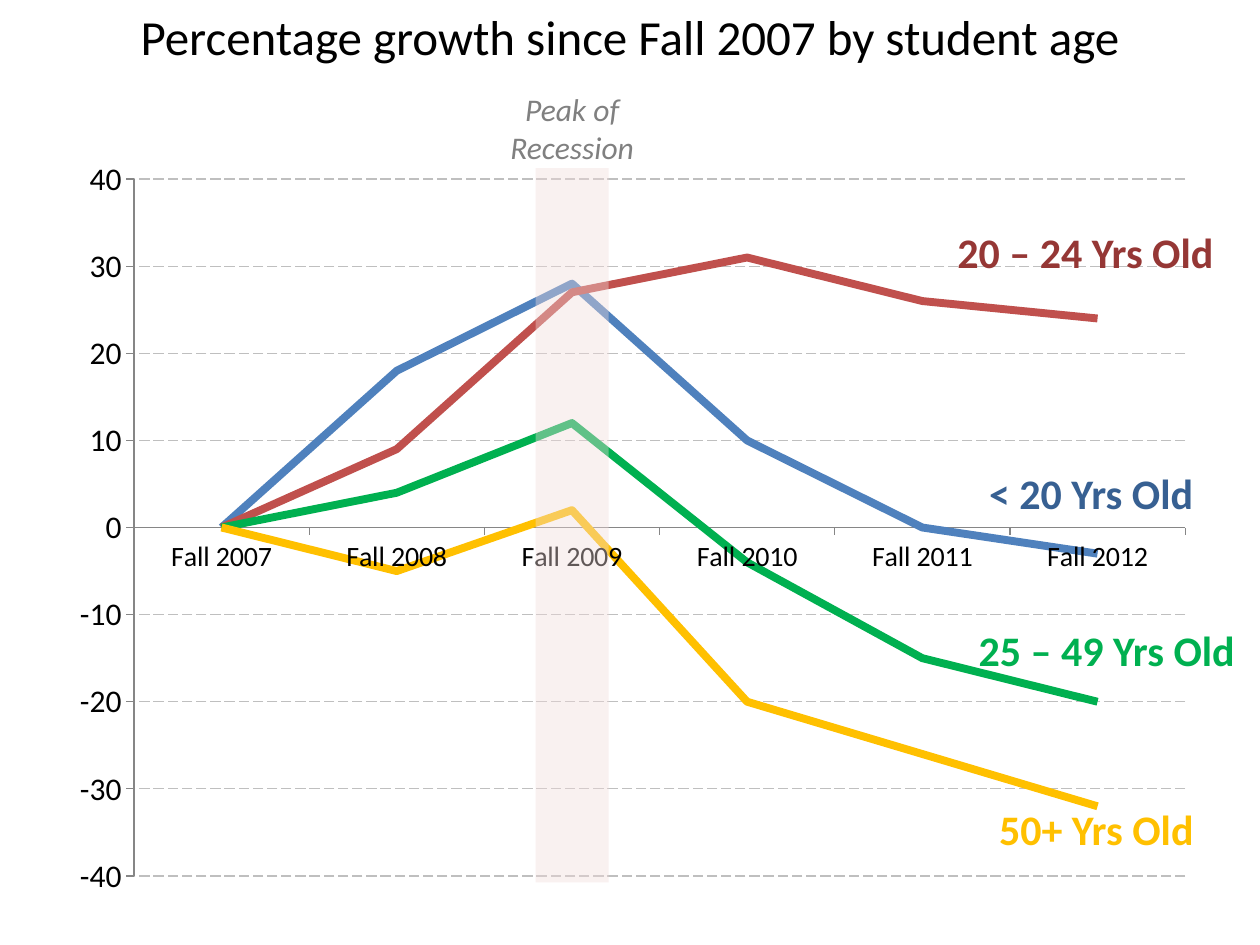
import lxml.etree
import pptx
import pptx.chart.data
import pptx.dml.color
import pptx.enum.chart
import pptx.enum.dml
import pptx.enum.shapes
import pptx.enum.text
import pptx.oxml.ns
import pptx.util

Cm = pptx.util.Cm
Pt = pptx.util.Pt
RGB = pptx.dml.color.RGBColor
qn = pptx.oxml.ns.qn
Align = pptx.enum.text.PP_ALIGN

BLACK = RGB(0x00, 0x00, 0x00)
GRAY = RGB(0x80, 0x80, 0x80)
AXIS = RGB(0x86, 0x86, 0x86)
GRID = RGB(0xBF, 0xBF, 0xBF)
BLUE = RGB(0x4F, 0x81, 0xBD)
NAVY = RGB(0x37, 0x60, 0x92)
RED = RGB(0xC0, 0x50, 0x4D)
WINE = RGB(0x95, 0x37, 0x35)
GREEN = RGB(0x00, 0xB0, 0x50)
GOLD = RGB(0xFF, 0xC0, 0x00)
PINK = RGB(0xF2, 0xDC, 0xDB)

TERMS = [f"Fall {year}" for year in range(2007, 2013)]
GROWTH = [
    ("Series 1", (0, 18, 28, 10, 0, -3), BLUE),
    ("Series 2", (0, 9, 27, 31, 26, 24), RED),
    ("Series 3", (0, 4, 12, -4, -15, -20), GREEN),
    ("Series 4", (0, -5, 2, -20, -26, -32), GOLD),
]
LABELS = [
    ("20 – 24 Yrs Old", (19.05, 4.45, 6.15, 1.27), WINE),
    ("< 20 Yrs Old", (19.69, 9.3, 5.51, 1.27), NAVY),
    ("25 – 49 Yrs Old", (19.48, 12.47, 5.92, 1.27), GREEN),
    ("50+ Yrs Old", (19.89, 16.08, 4.45, 1.27), GOLD),
]
PLOT = {"x": 0.07, "y": 0.05, "w": 0.91, "h": 0.91}


class Board:
    font = "Calibri"

    def __init__(self, deck):
        self.slide = deck.slides.add_slide(deck.slide_layouts[6])

    def text(self, words, area, size, color, align=None, bold=None, slant=None):
        box = self.slide.shapes.add_textbox(*map(Cm, area))
        frame = box.text_frame
        frame.word_wrap = True
        frame.text = words
        para = frame.paragraphs[0]
        para.alignment = align
        font = para.runs[0].font
        font.name, font.size = self.font, Pt(size)
        font.bold, font.italic = bold, slant
        font.color.rgb = color

    def band(self, area, color, alpha):
        kind = pptx.enum.shapes.MSO_SHAPE.RECTANGLE
        box = self.slide.shapes.add_shape(kind, *map(Cm, area))
        box.shadow.inherit = False
        box.fill.solid()
        box.fill.fore_color.rgb = color
        box.line.fill.background()
        tint = box._element.spPr.find(".//" + qn("a:srgbClr"))
        lxml.etree.SubElement(tint, qn("a:alpha")).set("val", str(alpha * 1000))

    def lines(self, area, cats, rows):
        data = pptx.chart.data.CategoryChartData()
        data.categories = cats
        for name, vals, _ in rows:
            data.add_series(name, vals)
        kind = pptx.enum.chart.XL_CHART_TYPE.LINE
        chart = self.slide.shapes.add_chart(kind, *map(Cm, area), data).chart
        chart.has_legend = chart.has_title = False
        chart.font.name, chart.font.size = self.font, Pt(18)
        chart.font.color.rgb = BLACK
        for line, (_, _, color) in zip(chart.plots[0].series, rows):
            line.smooth = False
            line.marker.style = pptx.enum.chart.XL_MARKER_STYLE.NONE
            line.format.line.width = Pt(4.5)
            line.format.line.color.rgb = color
        self.axes(chart)
        self.place(chart)

    def axes(self, chart):
        cat, val = chart.category_axis, chart.value_axis
        for axis in (cat, val):
            axis.major_tick_mark = pptx.enum.chart.XL_TICK_MARK.OUTSIDE
            axis.minor_tick_mark = pptx.enum.chart.XL_TICK_MARK.NONE
            axis.format.line.color.rgb = AXIS
            axis.format.line.width = Pt(0.75)
        cat.has_major_gridlines = False
        cat.tick_labels.font.size = Pt(16)
        val.minimum_scale, val.maximum_scale, val.major_unit = -40, 40, 10
        val.tick_labels.number_format = "0"
        val.tick_labels.number_format_is_linked = False
        val.has_major_gridlines = True
        grid = val.major_gridlines.format.line
        grid.color.rgb = GRID
        grid.width = Pt(0.75)
        grid.dash_style = pptx.enum.dml.MSO_LINE.LONG_DASH

    def place(self, chart):
        plot = chart._chartSpace.chart.plotArea
        for old in plot.findall(qn("c:layout")):
            plot.remove(old)
        frame = lxml.etree.Element(qn("c:layout"))
        plot.insert(0, frame)
        spot = lxml.etree.SubElement(frame, qn("c:manualLayout"))
        rules = {"layoutTarget": "inner", "xMode": "edge", "yMode": "edge", **PLOT}
        for key, val in rules.items():
            lxml.etree.SubElement(spot, qn("c:" + key)).set("val", str(val))


def main():
    deck = pptx.Presentation()
    deck.slide_width, deck.slide_height = Cm(25.4), Cm(19.05)
    board = Board(deck)
    board.text("Percentage growth since Fall 2007 by student age",
               (0, 0, 25.4, 1.45), 28, BLACK, Align.CENTER)
    board.lines((1.07, 2.84, 23.29, 15.44), TERMS, GROWTH)
    for words, area, color in LABELS:
        board.text(words, area, 24, color, bold=True)
    board.band((10.8, 3.39, 1.47, 14.4), PINK, 40)
    board.text("Peak of Recession", (9.73, 1.7, 3.61, 1.8), 18, GRAY,
               Align.CENTER, slant=True)
    deck.save("out.pptx")


if __name__ == "__main__":
    main()
